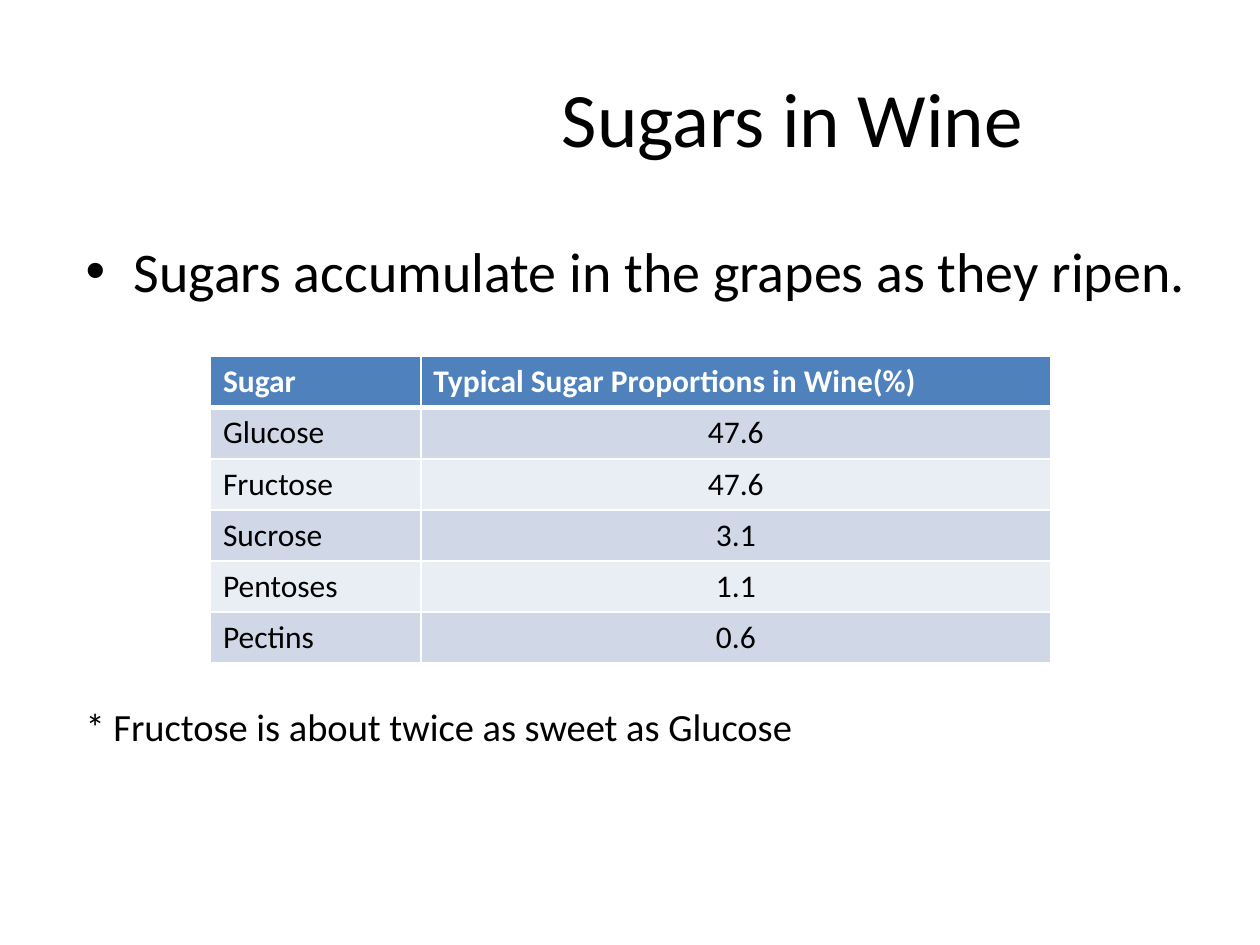
from lxml.etree import SubElement
from pptx import Presentation
from pptx.dml.color import RGBColor
from pptx.enum.text import MSO_ANCHOR, MSO_AUTO_SIZE, PP_ALIGN
from pptx.oxml.ns import qn
from pptx.util import Inches, Pt

FONT = "Calibri"
COLORS = {"text": "000000", "white": "FFFFFF", "head": "4F81BD",
          "odd": "D0D8E8", "even": "E9EDF4"}
ROWS = [("Sugar", "Typical Sugar Proportions in Wine(%)"),
        ("Glucose", "47.6"), ("Fructose", "47.6"), ("Sucrose", "3.1"),
        ("Pentoses", "1.1"), ("Pectins", "0.6")]


def color(name):
    return RGBColor.from_string(COLORS[name])


def style(para, size, name="text", bold=False):
    for run in para.runs:
        font = run.font
        font.name, font.size, font.bold = FONT, Pt(size), bold
        font.color.rgb = color(name)


def place(shape, left, top, width, height):
    shape.left, shape.top = Inches(left), Inches(top)
    shape.width, shape.height = Inches(width), Inches(height)


def set_bullet(para, char=None, indent=0):
    props = para._p.get_or_add_pPr()
    props.set("marL", str(Inches(indent)))
    props.set("indent", str(-Inches(indent)))
    if char:
        SubElement(props, qn("a:buFont"), typeface="Arial")
        SubElement(props, qn("a:buChar"), char=char)
    else:
        SubElement(props, qn("a:buNone"))


def add_title(slide):
    title = slide.shapes.title
    place(title, 3.08, 0.3, 6.42, 1.25)
    frame = title.text_frame
    frame.text = "Sugars in Wine"
    frame.vertical_anchor = MSO_ANCHOR.MIDDLE
    para = frame.paragraphs[0]
    para.alignment = PP_ALIGN.CENTER
    style(para, 44)


def add_body(slide):
    body = slide.placeholders[1]
    place(body, 0.58, 1.83, 9.08, 4.95)
    frame = body.text_frame
    frame.auto_size = MSO_AUTO_SIZE.NONE
    frame.text = "Sugars accumulate in the grapes as they ripen."
    point = frame.paragraphs[0]
    point.space_before = Pt(0)
    set_bullet(point, "•", 0.38)
    style(point, 32)
    note = frame.add_paragraph()
    note.text = "* Fructose is about twice as sweet as Glucose"
    note.space_before = Pt(228)  # leaves room for the table
    set_bullet(note)
    style(note, 22)


def set_borders(cell, row):
    """White grid, with a thicker rule under the header row."""
    props = cell._tc.get_or_add_tcPr()
    widths = {"L": 1, "R": 1, "T": 3 if row == 1 else 1,
              "B": 3 if row == 0 else 1}
    for pos, (side, width) in enumerate(widths.items()):
        line = SubElement(props, qn(f"a:ln{side}"), w=str(Pt(width)))
        fill = SubElement(line, qn("a:solidFill"))
        SubElement(fill, qn("a:srgbClr"), val=COLORS["white"])
        props.insert(pos, line)


def add_sugars(slide):
    frame = slide.shapes.add_table(len(ROWS), 2, Inches(1.67), Inches(2.83),
                                   Inches(6.67), Inches(2.43))
    table = frame.table
    for col, width in zip(table.columns, (1.67, 5)):
        col.width = Inches(width)
    for r, texts in enumerate(ROWS):
        head = r == 0
        band = "head" if head else "odd" if r % 2 else "even"
        for c, text in enumerate(texts):
            cell = table.cell(r, c)
            cell.text = text
            cell.fill.solid()
            cell.fill.fore_color.rgb = color(band)
            set_borders(cell, r)
            para = cell.text_frame.paragraphs[0]
            if c and not head:
                para.alignment = PP_ALIGN.CENTER
            style(para, 18, "white" if head else "text", head)


def main():
    deck = Presentation()
    deck.slide_width, deck.slide_height = Inches(10), Inches(7.5)
    slide = deck.slides.add_slide(deck.slide_layouts[1])
    add_title(slide)
    add_body(slide)
    add_sugars(slide)
    deck.save("out.pptx")


if __name__ == "__main__":
    main()
